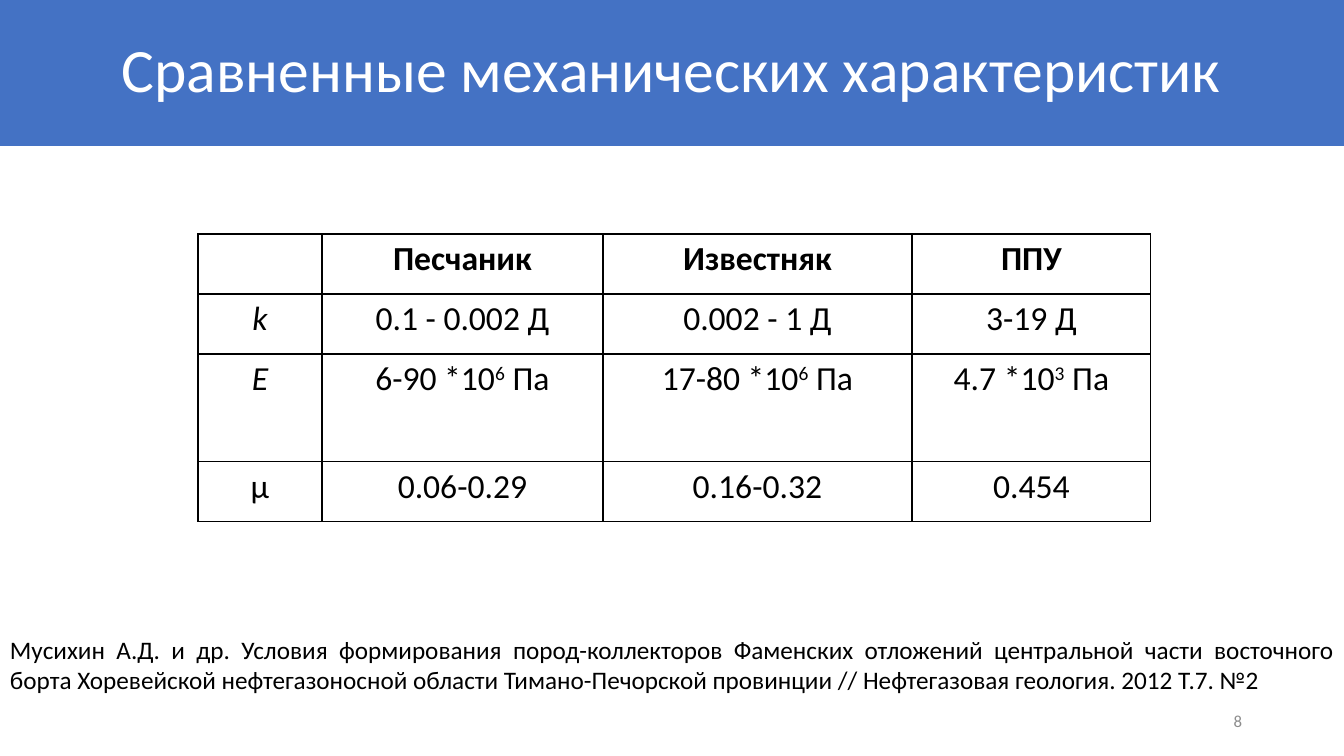
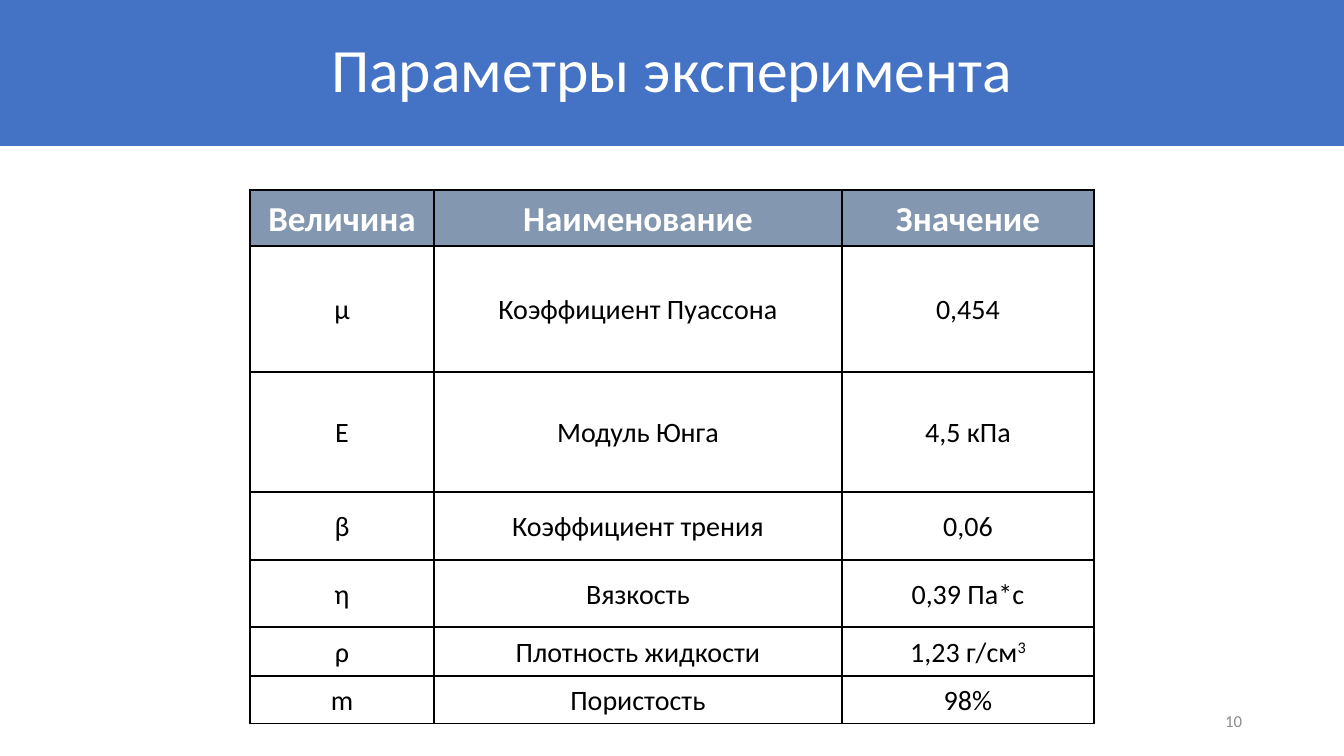
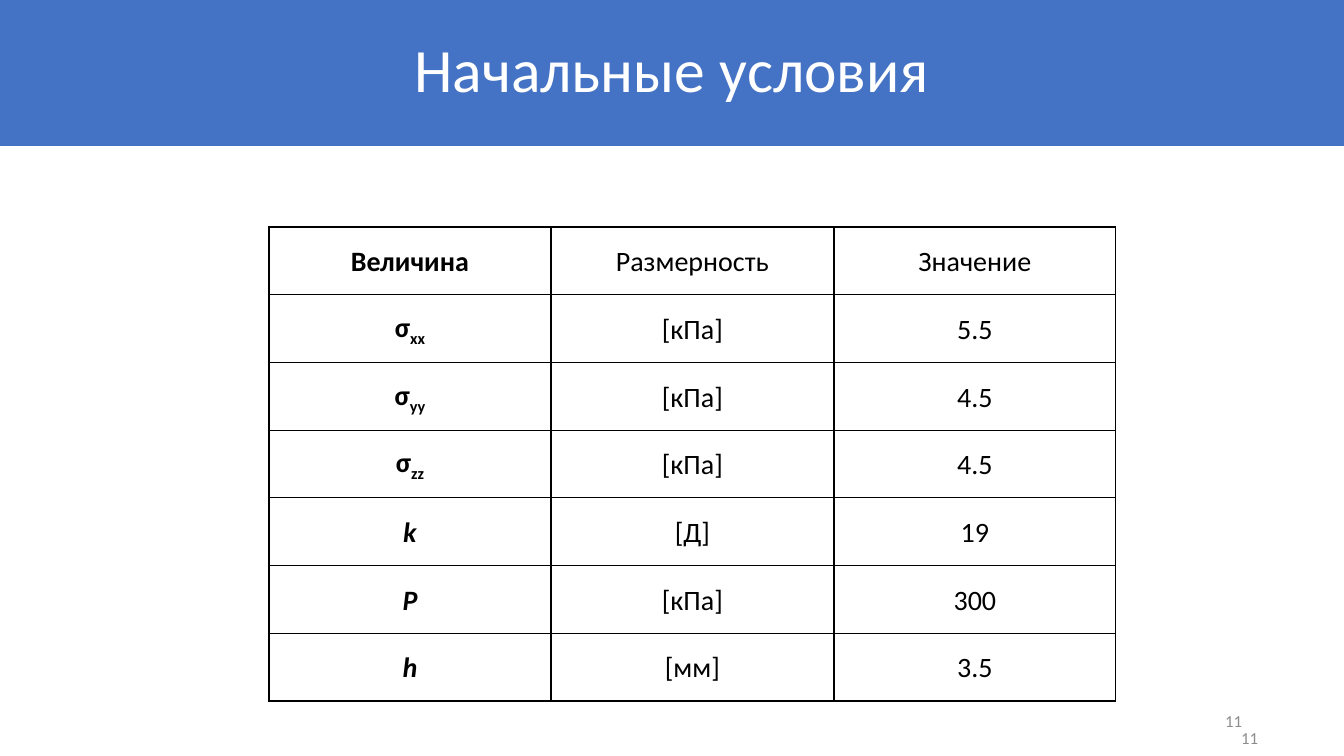
"""Build three slides with banded titles and tables of rock and model parameters."""
from lxml import etree
from pptx import Presentation, util as u
from pptx.dml.color import RGBColor
from pptx.enum import shapes, text
from pptx.oxml.ns import qn

PX = 914400 / 100.8
WIDE, HIGH, BAND = 1344, 756, 146
BLUE, SLATE, GRAY, BLACK, WHITE = "4472C4", "8497B0", "8C8C8C", "000000", "FFFFFF"
FACE = "Calibri"
NUM = (950, 701, 302, 40)
ALIGN, ANCHOR = text.PP_ALIGN, text.MSO_ANCHOR

# In cells, "/" starts italics and "|" encloses a raised or lowered part.
SLIDES = [
    dict(title="Сравненные механических характеристик", num="8",
         at=(198, 234), cols=[124, 281, 309, 239], rows=[60, 60, 108, 60],
         size=24, anchor=ANCHOR.TOP, bold="row", base=30000,
         cells=[
             ("", "Песчаник", "Известняк", "ППУ"),
             ("/k", "0.1 - 0.002 Д", "0.002 - 1 Д", "3-19 Д"),
             ("/E", "6-90 *10|6| Па", "17-80 *10|6| Па", "4.7 *10|3| Па"),
             ("μ", "0.06-0.29", "0.16-0.32", "0.454")],
         note="Мусихин А.Д. и др. Условия формирования пород-коллекторов "
              "Фаменских отложений центральной части восточного борта "
              "Хоревейской нефтегазоносной области Тимано-Печорской провинции "
              "// Нефтегазовая геология. 2012 Т.7. №2"),
    dict(title="Параметры эксперимента", num="10",
         at=(250, 190), cols=[184, 408, 252], rows=[56, 126, 120, 68, 67, 49, 48],
         size=20, bold="row", base=30000, lead=1.07, head=(25, WHITE, SLATE),
         cells=[
             ("Величина", "Наименование", "Значение"),
             ("μ", "Коэффициент Пуассона", "0,454"),
             ("Ε", "Модуль Юнга", "4,5 кПа"),
             ("β", "Коэффициент трения", "0,06"),
             ("η", "Вязкость", "0,39 Па*с"),
             ("ρ", "Плотность жидкости", "1,23 г/см|3|"),
             ("m", "Пористость", "98%")]),
    dict(title="Начальные условия", num="11", extra=(966, 718, 302, 40),
         at=(269, 227), cols=[282, 283, 282], rows=[474 / 7] * 7,
         size=20, bold="col", base=-25000, lead=1.07, inset=(7, 0),
         cells=[
             ("Величина", "Размерность", "Значение"),
             ("σ|xx|", "[кПа]", "5.5"),
             ("σ|yy|", "[кПа]", "4.5"),
             ("σ|zz|", "[кПа]", "4.5"),
             ("/k", "[Д]", "19"),
             ("/P", "[кПа]", "300"),
             ("/h", "[мм]", "3.5")]),
]


def px(n):
    return u.Emu(round(n * PX))


def box(at):
    return [px(n) for n in at]


def rgb(code):
    return RGBColor.from_string(code)


def paint(obj, code):
    obj.fill.solid()
    obj.fill.fore_color.rgb = rgb(code)


def style(par, size, color, align, lead=None, bold=False, slant=False):
    par.alignment = align
    par.line_spacing = lead
    font = par.font
    font.name, font.size, font.color.rgb = FACE, u.Pt(size), rgb(color)
    font.bold, font.italic = bold, slant


def label(slide, at, words, size, color, align, anchor):
    frame = slide.shapes.add_textbox(*box(at)).text_frame
    frame.word_wrap, frame.vertical_anchor = True, anchor
    frame.text = words
    style(frame.paragraphs[0], size, color, align)


def band(slide, words):
    bar = slide.shapes.add_shape(shapes.MSO_SHAPE.RECTANGLE, *box((0, 0, WIDE, BAND)))
    bar.shadow.inherit = False
    bar.line.fill.background()
    paint(bar, BLUE)
    frame = bar.text_frame
    frame.word_wrap, frame.vertical_anchor = True, ANCHOR.MIDDLE
    frame.text = words
    style(frame.paragraphs[0], 44, WHITE, ALIGN.CENTER, 0.9)


def border(cell):
    props = cell._tc.get_or_add_tcPr()
    for side in ("lnL", "lnR", "lnT", "lnB"):
        line = etree.SubElement(props, qn("a:" + side), w=str(u.Pt(1)))
        fill = etree.SubElement(line, qn("a:solidFill"))
        etree.SubElement(fill, qn("a:srgbClr"), val=BLACK)


def write(par, words, base):
    for i, part in enumerate(words.split("|")):
        if part:
            run = par.add_run()
            run.text = part
            if i % 2:
                run._r.get_or_add_rPr().set("baseline", str(base))


def grid(slide, data):
    cols, rows = data["cols"], data["rows"]
    area = box((*data["at"], sum(cols), sum(rows)))
    tab = slide.shapes.add_table(len(rows), len(cols), *area).table
    tab.first_row = tab.horz_banding = False
    for col, wide in zip(tab.columns, cols):
        col.width = px(wide)
    body = (data["size"], BLACK, WHITE)
    for r, (row, high) in enumerate(zip(tab.rows, rows)):
        row.height = px(high)
        size, color, fill = body if r else data.get("head", body)
        for c, (cell, words) in enumerate(zip(row.cells, data["cells"][r])):
            border(cell)
            paint(cell, fill)
            cell.vertical_anchor = data.get("anchor", ANCHOR.MIDDLE)
            side, edge = data.get("inset", (10, 5))
            cell.margin_left = cell.margin_right = px(side)
            cell.margin_top = cell.margin_bottom = px(edge)
            par = cell.text_frame.paragraphs[0]
            bold = (r if data["bold"] == "row" else c) == 0
            style(par, size, color, ALIGN.CENTER, data.get("lead"), bold,
                  words.startswith("/"))
            write(par, words.removeprefix("/"), data["base"])


def main():
    deck = Presentation()
    deck.slide_width, deck.slide_height = px(WIDE), px(HIGH)
    for data in SLIDES:
        slide = deck.slides.add_slide(deck.slide_layouts[6])
        band(slide, data["title"])
        grid(slide, data)
        for at in filter(None, (NUM, data.get("extra"))):
            label(slide, at, data["num"], 12, GRAY, ALIGN.RIGHT, ANCHOR.MIDDLE)
        if "note" in data:
            label(slide, (0, 629, WIDE, 72), data["note"], 18, BLACK,
                  ALIGN.JUSTIFY, ANCHOR.TOP)
    deck.save("out.pptx")


if __name__ == "__main__":
    main()
